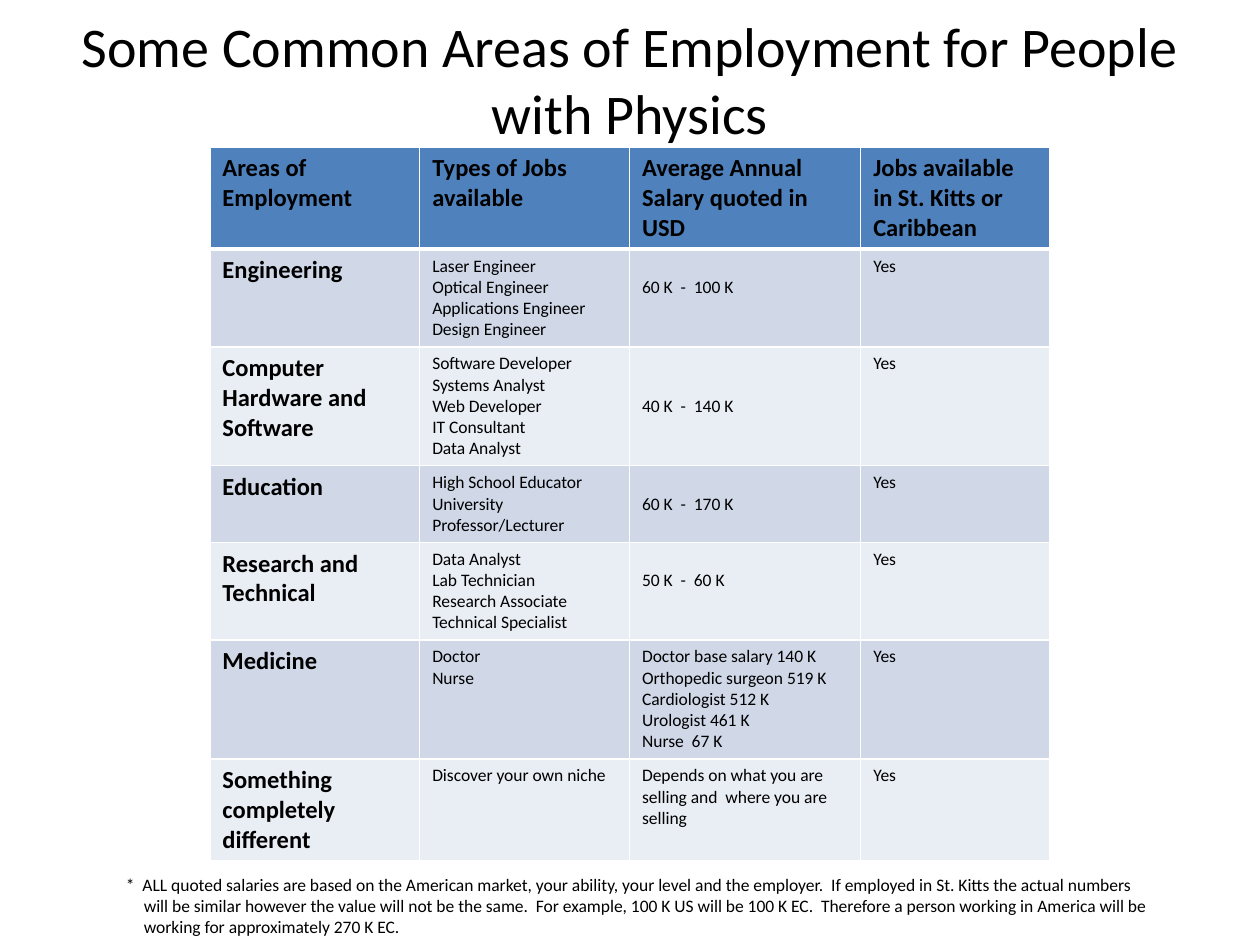
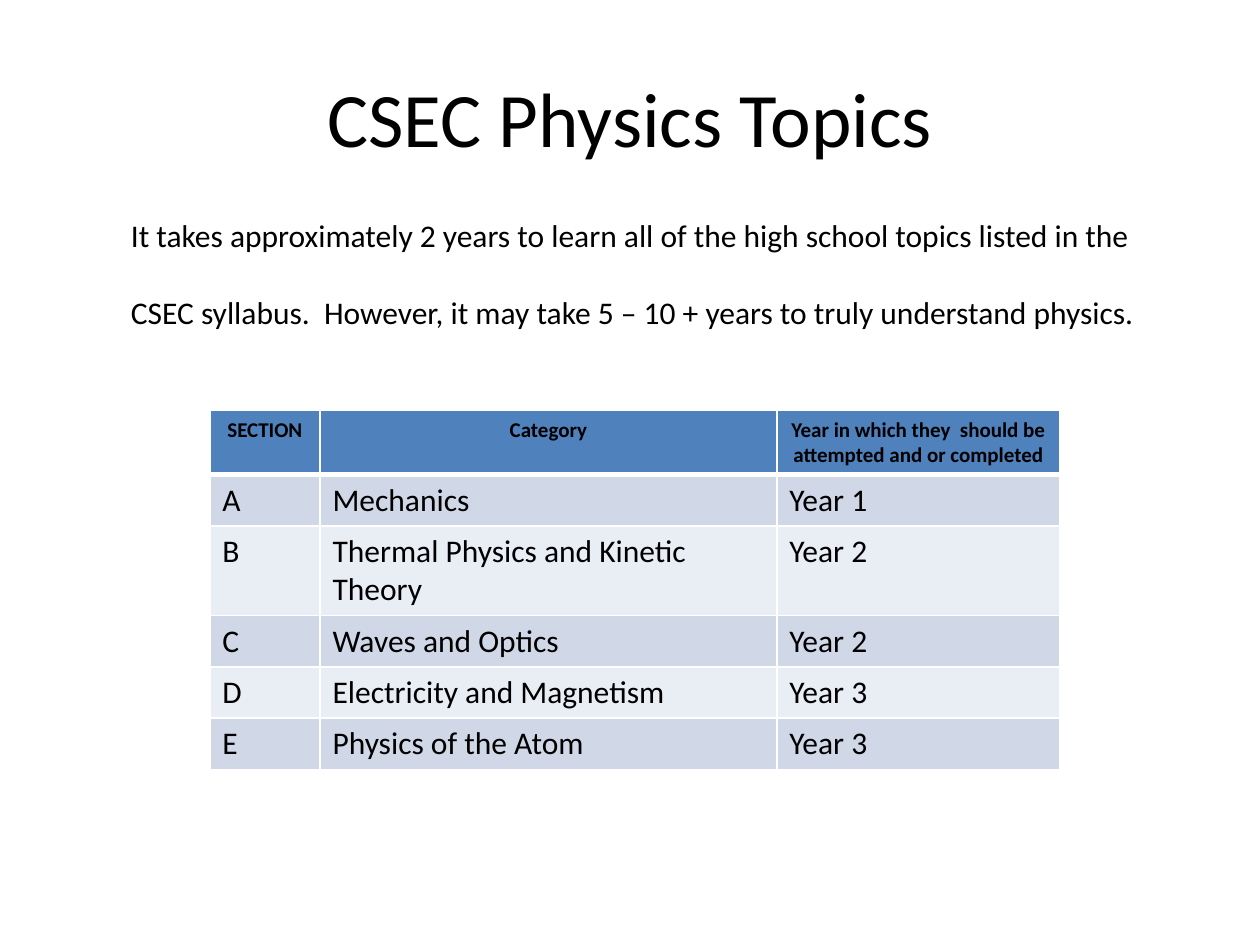
from dataclasses import dataclass

from lxml import etree
from pptx import Presentation
from pptx import util as u
from pptx.dml.color import RGBColor
from pptx.enum import text
from pptx.oxml import ns


@dataclass(frozen=True)
class Theme:
    font: str = "Calibri"
    ink: str = "000000"
    rule: str = "FFFFFF"
    header_fill: str = "4F81BD"
    band_fills: tuple[str, str] = ("D0D8E8", "E9EDF4")
    rule_width: float = 1
    header_rule_width: float = 3
    small: int = 10
    label: int = 12
    heading: int = 14
    reading: int = 18
    long_title: int = 32
    title: int = 44
    line_spacing: float = 1.22


THEME = Theme()


@dataclass(frozen=True)
class Area:
    left: float
    top: float
    width: float
    height: float

    def lengths(self) -> tuple[u.Length, ...]:
        return tuple(u.Cm(n) for n in (self.left, self.top, self.width, self.height))


@dataclass(frozen=True)
class TextStyle:
    size: int
    bold: bool = False
    align: text.PP_ALIGN = text.PP_ALIGN.LEFT


@dataclass(frozen=True)
class Entry:
    """Cell text, pushed down by a number of text lines."""
    words: str
    lines_down: int = 0


@dataclass(frozen=True)
class TableSpec:
    left: float
    top: float
    height: float
    columns: tuple[float, ...]
    header_style: TextStyle
    first_column_style: TextStyle
    body_style: TextStyle
    rows: tuple[tuple[str | Entry, ...], ...]


ROW_HEIGHT = 1.03
CELL_TOP_MARGIN = u.Cm(0.13)
TABLE_LEFT = 4.23

EMPLOYMENT = TableSpec(
    TABLE_LEFT, 2.96, 14.22, (4.23, 4.23, 4.66, 3.81),
    header_style=TextStyle(THEME.heading, bold=True),
    first_column_style=TextStyle(THEME.heading, bold=True),
    body_style=TextStyle(THEME.small),
    rows=(
        ("Areas of Employment", "Types of Jobs available",
         "Average Annual Salary quoted in USD", "Jobs available in St. Kitts or Caribbean"),
        ("Engineering",
         "Laser Engineer\nOptical Engineer\nApplications Engineer\nDesign Engineer",
         Entry("60 K  -  100 K", 1), "Yes"),
        ("Computer Hardware and Software",
         "Software Developer\nSystems Analyst\nWeb Developer\nIT Consultant\nData Analyst",
         Entry("40 K  -  140 K", 2), "Yes"),
        ("Education", "High School Educator\nUniversity Professor/Lecturer",
         Entry("60 K  -  170 K", 1), "Yes"),
        ("Research and Technical",
         "Data Analyst\nLab Technician\nResearch Associate\nTechnical Specialist",
         Entry("50 K  -  60 K", 1), "Yes"),
        ("Medicine", "Doctor\nNurse",
         "Doctor base salary 140 K\nOrthopedic surgeon 519 K\nCardiologist 512 K\n"
         "Urologist 461 K\nNurse  67 K", "Yes"),
        ("Something completely different", "Discover your own niche",
         "Depends on what you are selling and  where you are selling", "Yes"),
    ),
)

TOPICS = TableSpec(
    TABLE_LEFT, 8.28, 7.16, (2.22, 9.21, 5.71),
    header_style=TextStyle(THEME.label, bold=True, align=text.PP_ALIGN.CENTER),
    first_column_style=TextStyle(THEME.reading),
    body_style=TextStyle(THEME.reading),
    rows=(
        ("SECTION", "Category", "Year in which they  should be attempted and or completed"),
        ("A", "Mechanics", "Year 1"),
        ("B", "Thermal Physics and Kinetic Theory", "Year 2"),
        ("C", "Waves and Optics", "Year 2"),
        ("D", "Electricity and Magnetism", "Year 3"),
        ("E", "Physics of the Atom", "Year 3"),
    ),
)

SALARY_NOTE = (
    "*  ALL quoted salaries are based on the American market, your ability, your level and "
    "the employer.  If employed in St. Kitts the actual numbers\v"
    "will be similar however the value will not be the same.  For example, 100 K US will be "
    "100 K EC.  Therefore a person working in America will be\v"
    "working for approximately 270 K EC."
)
STUDY_TIME = (
    "It takes approximately 2 years to learn all of the high school topics listed in the\n"
    "CSEC syllabus.  However, it may take 5 – 10 + years to truly understand physics."
)


def write(frame, words: str, style: TextStyle, gap: float = 0, hanging: float = 0) -> None:
    """Fill a frame; each line of words is a paragraph, gap points apart."""
    frame.text = words
    font_values = {"name": THEME.font, "size": u.Pt(style.size), "bold": style.bold}
    for index, para in enumerate(frame.paragraphs):
        para.alignment = style.align
        if gap and index:
            para.space_before = u.Pt(gap)
        if hanging:
            properties = para._p.get_or_add_pPr()
            properties.set("marL", str(u.Cm(hanging)))
            properties.set("indent", str(-u.Cm(hanging)))
        for span in para.runs:
            for name, value in font_values.items():
                setattr(span.font, name, value)
            span.font.color.rgb = RGBColor.from_string(THEME.ink)


def add_titled_slide(deck, words: str, top: float, size: int):
    page = deck.slides.add_slide(deck.slide_layouts.get_by_name("Title Only"))
    title = page.shapes.title
    title.left, title.top, title.width, title.height = Area(1.27, top, 22.86, 3.18).lengths()
    frame = title.text_frame
    frame.auto_size = text.MSO_AUTO_SIZE.NONE
    frame.vertical_anchor = text.MSO_ANCHOR.MIDDLE
    write(frame, words, TextStyle(size, align=text.PP_ALIGN.CENTER))
    return page


def add_note(page, area: Area, words: str, size: int, gap: float = 0, hanging: float = 0) -> None:
    box = page.shapes.add_textbox(*area.lengths())
    box.text_frame.word_wrap = True
    write(box.text_frame, words, TextStyle(size), gap, hanging)


def set_borders(cell, top: float, bottom: float) -> None:
    properties = cell._tc.get_or_add_tcPr()
    widths = {"L": THEME.rule_width, "R": THEME.rule_width, "T": top, "B": bottom}
    for side, width in widths.items():
        line = etree.SubElement(properties, ns.qn(f"a:ln{side}"), w=str(u.Pt(width)))
        fill = etree.SubElement(line, ns.qn("a:solidFill"))
        etree.SubElement(fill, ns.qn("a:srgbClr"), val=THEME.rule)


def add_banded_table(page, spec: TableSpec) -> None:
    area = Area(spec.left, spec.top, sum(spec.columns), spec.height)
    holder = page.shapes.add_table(len(spec.rows), len(spec.columns), *area.lengths())
    table = holder.table
    for column, width in zip(table.columns, spec.columns):
        column.width = u.Cm(width)
    for row_index, entries in enumerate(spec.rows):
        table.rows[row_index].height = u.Cm(ROW_HEIGHT)
        is_header = row_index == 0
        fill = THEME.header_fill if is_header else THEME.band_fills[(row_index - 1) % 2]
        top = THEME.header_rule_width if row_index == 1 else THEME.rule_width
        bottom = THEME.header_rule_width if is_header else THEME.rule_width
        for column_index, entry in enumerate(entries):
            if isinstance(entry, str):
                entry = Entry(entry)
            if is_header:
                style = spec.header_style
            else:
                style = spec.body_style if column_index else spec.first_column_style
            cell = table.cell(row_index, column_index)
            set_borders(cell, top, bottom)
            cell.fill.solid()
            cell.fill.fore_color.rgb = RGBColor.from_string(fill)
            drop = u.Pt(entry.lines_down * style.size * THEME.line_spacing)
            cell.margin_top = CELL_TOP_MARGIN + drop
            write(cell.text_frame, entry.words, style)
    holder.height = u.Cm(spec.height)


def main() -> None:
    deck = Presentation()
    deck.slide_width, deck.slide_height = u.Cm(25.4), u.Cm(19.05)

    jobs = add_titled_slide(
        deck, "Some Common Areas of Employment for People with Physics", 0, THEME.long_title)
    add_banded_table(jobs, EMPLOYMENT)
    add_note(jobs, Area(2.29, 17.5, 21.44, 1.55), SALARY_NOTE, THEME.small, hanging=0.36)

    topics = add_titled_slide(deck, "CSEC Physics Topics", 0.76, THEME.title)
    add_banded_table(topics, TOPICS)
    add_note(topics, Area(2.39, 4.24, 20.96, 2.57), STUDY_TIME, THEME.reading,
             gap=THEME.reading * THEME.line_spacing)

    deck.save("out.pptx")


if __name__ == "__main__":
    main()
